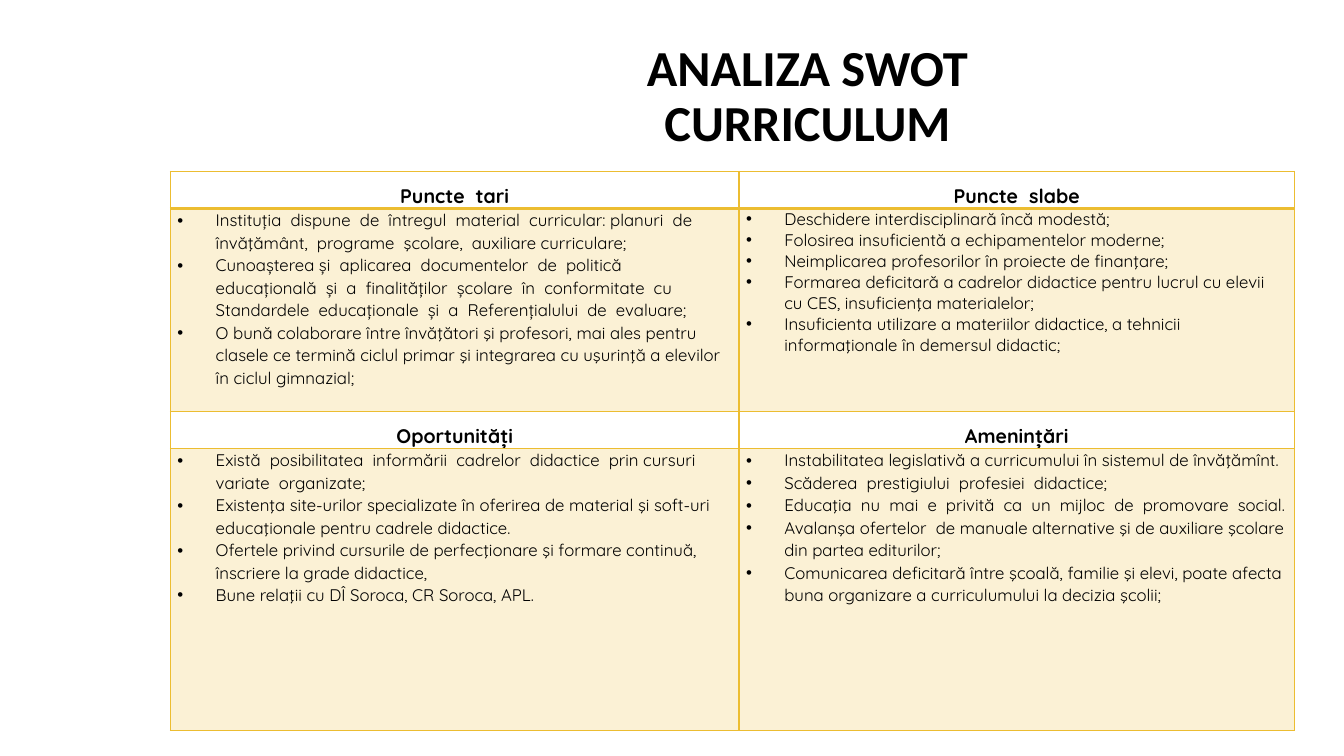
from dataclasses import dataclass
from lxml.etree import SubElement
from pptx import Presentation
from pptx.dml.color import RGBColor as RGB
from pptx.enum.text import MSO_ANCHOR as Anchor, PP_ALIGN as Align
from pptx.oxml import parse_xml
from pptx.oxml.ns import nsdecls, qn
from pptx.util import Inches, Pt

TITLE = "ANALIZA SWOT\vCURRICULUM"
SWOT = [
    [("Puncte  tari", 1.07, [
        "Instituția  dispune  de  întregul  material  curricular: planuri  de  învăţământ,  programe  şcolare,  auxiliare curriculare;",
        "Cunoașterea și  aplicarea  documentelor  de  politică  educațională  și  a  finalităților  școlare  în  conformitate  cu  Standardele  educaționale  și  a  Referențialului  de  evaluare;",
        "O bună colaborare între învăţători şi profesori, mai ales pentru clasele ce termină ciclul primar şi integrarea cu uşurinţă a elevilor în ciclul gimnazial;",
    ]), ("Puncte  slabe", 1.0, [
        "Deschidere interdisciplinară încă modestă;",
        "Folosirea insuficientă a echipamentelor moderne;",
        "Neimplicarea profesorilor în proiecte de finanţare;",
        "Formarea deficitară a cadrelor didactice pentru lucrul cu elevii cu CES, insuficienţa materialelor;",
        "Insuficienta utilizare a materiilor didactice, a tehnicii informaţionale în demersul didactic;",
    ])],
    [("Oportunități", 1.07, [
        "Există  posibilitatea  informării  cadrelor  didactice  prin cursuri  variate  organizate;",
        "Existenţa site-urilor specializate în oferirea de material şi soft-uri educaţionale pentru cadrele didactice.",
        "Ofertele privind cursurile de perfecţionare şi formare continuă, înscriere la grade didactice,",
        "Bune relaţii cu DÎ Soroca, CR Soroca, APL.",
    ]), ("Amenințări", 1.07, [
        "Instabilitatea legislativă a curricumului în sistemul de învăţămînt.",
        "Scăderea  prestigiului  profesiei  didactice;",
        "Educaţia  nu  mai  e  privită  ca  un  mijloc  de  promovare  social.",
        "Avalanşa ofertelor  de manuale alternative şi de auxiliare şcolare din partea editurilor;",
        "Comunicarea deficitară între şcoală, familie şi elevi, poate afecta buna organizare a curriculumului la decizia şcolii;",
    ])],
]
COLS = [5.64, 5.51]
ROWS = [0.37, 2.01, 0.37, 2.8]


@dataclass
class Theme:
    ink: str = "000000"
    gold: str = "ECBD31"
    tint: int = 20
    title: int = 36
    head: int = 14
    body: int = 12
    display: str = "Calibri"
    text: str = "Quicksand"


theme = Theme()


def style(par, size, face, bold, gap):
    par.line_spacing = gap
    font = par.font
    font.size, font.name, font.bold = Pt(size), face, bold
    font.color.rgb = RGB.from_string(theme.ink)


def border(cell, heavy):
    props = cell._tc.get_or_add_tcPr()
    for side in "LRTB":
        width = Pt(2 if side == heavy else 1)
        props.append(parse_xml(
            f'<a:ln{side} {nsdecls("a")} w="{width}"><a:solidFill>'
            f'<a:srgbClr val="{theme.gold}"/></a:solidFill></a:ln{side}>'))


def shade(cell):
    cell.fill.solid()
    cell.fill.fore_color.rgb = RGB.from_string(theme.gold)
    color = cell._tc.tcPr.find(qn("a:solidFill"))[0]
    SubElement(color, qn("a:alpha"), val=str(theme.tint * 1000))


def bullet(par):
    props = par._p.get_or_add_pPr()
    indent = Inches(0.38)
    props.set("marL", str(indent))
    props.set("indent", str(-indent))
    SubElement(props, qn("a:buFont"), typeface="Arial")
    SubElement(props, qn("a:buChar"), char="•")


def prepare(cell, heavy):
    cell.margin_left = cell.margin_right = Inches(0.07)
    cell.margin_top = cell.margin_bottom = 0
    border(cell, heavy)


def main():
    deck = Presentation()
    deck.slide_width, deck.slide_height = Inches(13.33), Inches(7.5)
    slide = deck.slides.add_slide(deck.slide_layouts[5])

    title = slide.shapes.title
    title.left, title.top = Inches(3.3), Inches(0.38)
    title.width, title.height = Inches(9.42), Inches(1.18)
    frame = title.text_frame
    frame.text = TITLE
    frame.vertical_anchor = Anchor.MIDDLE
    frame.paragraphs[0].alignment = Align.CENTER
    style(frame.paragraphs[0], theme.title, theme.display, True, 0.9)

    table = slide.shapes.add_table(
        len(ROWS), len(COLS), Inches(1.69), Inches(1.7),
        Inches(sum(COLS)), Inches(sum(ROWS))).table
    table.first_row = table.horz_banding = False
    for col, width in zip(table.columns, COLS):
        col.width = Inches(width)
    for row, height in zip(table.rows, ROWS):
        row.height = Inches(height)

    for band, pair in enumerate(SWOT):
        for col, (name, gap, points) in enumerate(pair):
            head, body = (table.cell(2 * band + i, col) for i in range(2))
            prepare(head, "B" if band == 0 else None)
            head.fill.background()
            head.text = name
            par = head.text_frame.paragraphs[0]
            par.alignment = Align.CENTER
            style(par, theme.head, theme.text, True, 1.5)

            prepare(body, "T" if band == 0 else None)
            shade(body)
            body.text = "\n".join(points)
            for par in body.text_frame.paragraphs:
                bullet(par)
                style(par, theme.body, theme.text, False, gap)

    deck.save("out.pptx")


if __name__ == "__main__":
    main()
